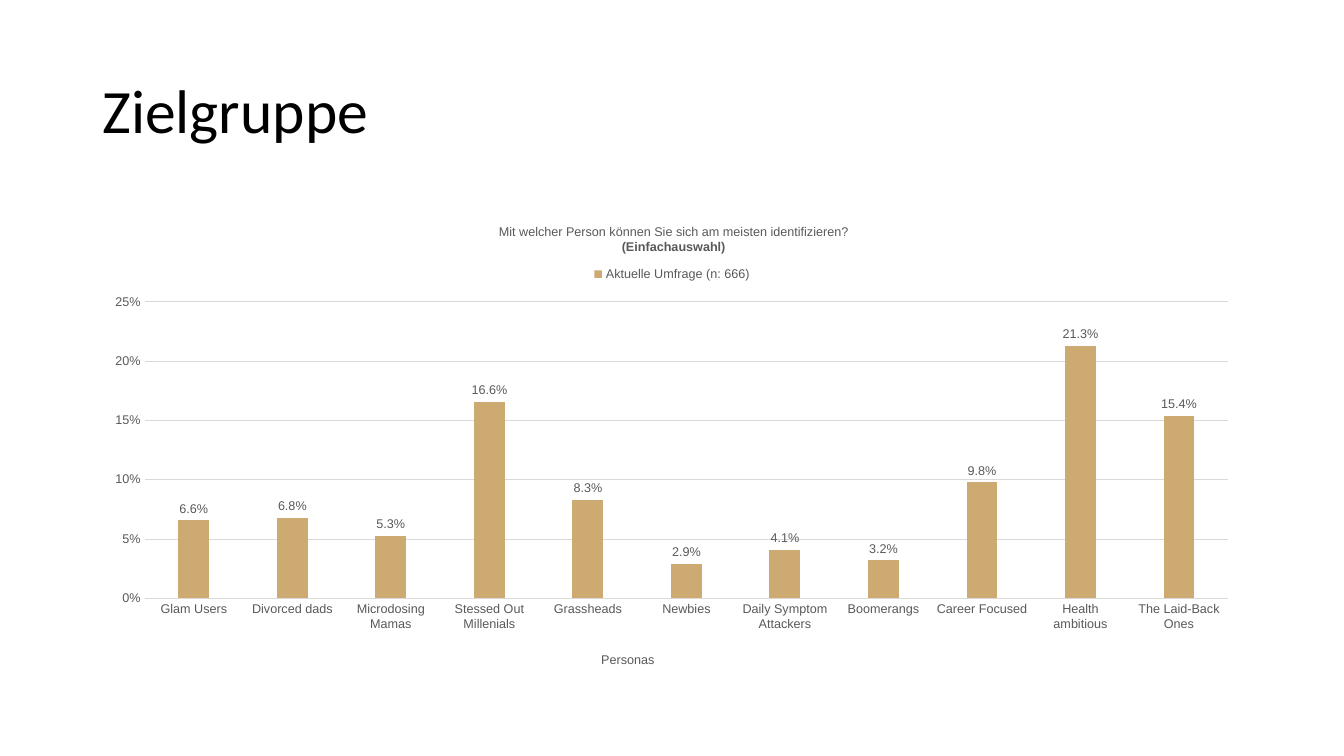
from lxml import etree
from pptx import Presentation
from pptx.chart.data import CategoryChartData
from pptx.dml.color import RGBColor
from pptx.enum.chart import XL_CHART_TYPE, XL_LABEL_POSITION, XL_LEGEND_POSITION, XL_TICK_MARK
from pptx.enum.text import MSO_ANCHOR
from pptx.oxml.ns import qn
from pptx.util import Cm, Pt

COLUMNS = XL_CHART_TYPE.COLUMN_CLUSTERED
OUTSIDE_END = XL_LABEL_POSITION.OUTSIDE_END
LEGEND_TOP = XL_LEGEND_POSITION.TOP
NO_TICK = XL_TICK_MARK.NONE
MIDDLE = MSO_ANCHOR.MIDDLE

COLORS = {"title": "000000", "text": "595959", "grid": "D9D9D9", "bar": "CCAA72"}
PERSONAS = {
    "Glam Users": 0.066,
    "Divorced dads": 0.068,
    "Microdosing Mamas": 0.053,
    "Stessed Out Millenials": 0.166,
    "Grassheads": 0.083,
    "Newbies": 0.029,
    "Daily Symptom Attackers": 0.041,
    "Boomerangs": 0.032,
    "Career Focused": 0.098,
    "Health ambitious": 0.213,
    "The Laid-Back Ones": 0.154,
}
QUESTION = [("Mit welcher Person können Sie sich am meisten identifizieren?", False),
            ("(Einfachauswahl)", True)]


def place(element, index, inner=False, **fractions):
    """Give a chart part a manual layout in fractions of the chart area."""
    for old in element.findall(qn("c:layout")):
        element.remove(old)
    layout = etree.Element(qn("c:layout"))
    manual = etree.SubElement(layout, qn("c:manualLayout"))
    if inner:
        etree.SubElement(manual, qn("c:layoutTarget")).set("val", "inner")
    for key in ("x", "y"):
        etree.SubElement(manual, qn(f"c:{key}Mode")).set("val", "edge")
    for key, value in fractions.items():
        etree.SubElement(manual, qn(f"c:{key}")).set("val", str(value))
    element.insert(index, layout)


class SlideBuilder:
    def __init__(self, slide):
        self.slide = slide
        self.title_font = "Calibri"
        self.chart_font = "Arial"

    def style_font(self, font, name, size, color, bold=False):
        font.name = name
        font.size = Pt(size)
        font.bold = bold
        font.color.rgb = RGBColor.from_string(COLORS[color])

    def style_line(self, line):
        line.color.rgb = RGBColor.from_string(COLORS["grid"])
        line.width = Pt(0.75)

    def add_title(self, text, left, top, width, height):
        box = self.slide.shapes.add_textbox(Cm(left), Cm(top), Cm(width), Cm(height))
        frame = box.text_frame
        frame.word_wrap = True
        frame.vertical_anchor = MIDDLE
        para = frame.paragraphs[0]
        para.line_spacing = 0.9
        span = para.add_run()
        span.text = text
        self.style_font(span.font, self.title_font, 44, "title")

    def write_chart_title(self, title, lines, x, y):
        frame = title.text_frame
        for number, (text, bold) in enumerate(lines):
            para = frame.add_paragraph() if number else frame.paragraphs[0]
            span = para.add_run()
            span.text = text
            self.style_font(span.font, self.chart_font, 9, "text", bold)
        place(title._element, 1, x=x, y=y)

    def add_column_chart(self, series_name, values, left, top, width, height):
        data = CategoryChartData(number_format="0.0%")
        data.categories = values.keys()
        data.add_series(series_name, values.values())
        chart = self.slide.shapes.add_chart(
            COLUMNS, Cm(left), Cm(top), Cm(width), Cm(height), data).chart
        self.style_font(chart.font, self.chart_font, 9, "text")
        self.style_columns(chart.plots[0])
        self.style_axes(chart.category_axis, chart.value_axis)
        chart.has_legend = True
        chart.legend.position = LEGEND_TOP
        chart.legend.include_in_layout = False
        self.style_font(chart.legend.font, self.chart_font, 9, "text")
        place(chart._chartSpace.chart.plotArea, 0, inner=True,
              x=0.045, y=0.21, w=0.935, h=0.618)
        return chart

    def style_columns(self, plot):
        plot.gap_width = 219
        plot.overlap = -27
        plot.vary_by_categories = False
        fill = plot.series[0].format.fill
        fill.solid()
        fill.fore_color.rgb = RGBColor.from_string(COLORS["bar"])
        plot.has_data_labels = True
        labels = plot.data_labels
        labels.show_value = True
        labels.position = OUTSIDE_END
        labels.number_format = "0.0%"
        labels.number_format_is_linked = False
        self.style_font(labels.font, self.chart_font, 9, "text")

    def style_axes(self, category_axis, value_axis):
        for axis in (category_axis, value_axis):
            axis.major_tick_mark = axis.minor_tick_mark = NO_TICK
            self.style_font(axis.tick_labels.font, self.chart_font, 9, "text")
        self.style_line(category_axis.format.line)
        value_axis.format.line.fill.background()
        value_axis.minimum_scale = 0
        value_axis.maximum_scale = 0.25
        value_axis.major_unit = 0.05
        value_axis.tick_labels.number_format = "0%"
        value_axis.tick_labels.number_format_is_linked = False
        value_axis.has_major_gridlines = True
        self.style_line(value_axis.major_gridlines.format.line)


def main():
    deck = Presentation()
    deck.slide_width, deck.slide_height = Cm(33.87), Cm(19.05)
    page = SlideBuilder(deck.slides.add_slide(deck.slide_layouts[6]))
    page.add_title("Zielgruppe", 2.33, 1.01, 29.21, 3.68)
    chart = page.add_column_chart("Aktuelle Umfrage (n: 666)", PERSONAS,
                                  2.33, 5.07, 29.21, 12.09)
    page.write_chart_title(chart.chart_title, QUESTION, 0.348, 0.04)
    page.write_chart_title(chart.category_axis.axis_title, [("Personas", False)], 0.437, 0.933)
    deck.save("out.pptx")


if __name__ == "__main__":
    main()
